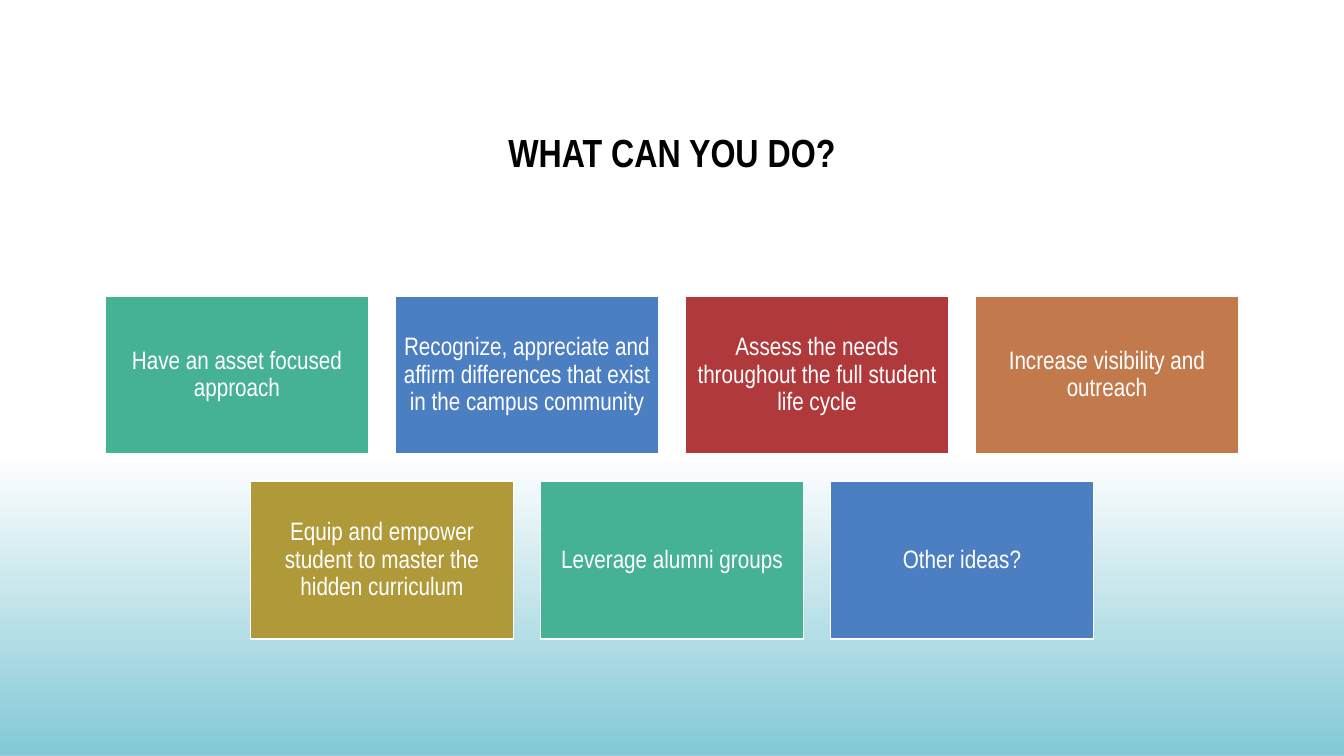
from lxml.etree import SubElement
from pptx import Presentation
from pptx.dml.color import RGBColor
from pptx.enum.shapes import MSO_SHAPE as SHAPE
from pptx.enum.text import MSO_ANCHOR as ANCHOR, PP_ALIGN as ALIGN
from pptx.oxml.ns import qn
from pptx.util import Emu, Pt

WIDTH, HEIGHT = 1344, 756
TILE_W, TILE_H, GAP, INSET = 263, 158, 27, 7
FONT = "Arial Narrow"
GREEN, BLUE, RED, ORANGE, OLIVE = "45B195", "4C7EC2", "B0393C", "C27A4C", "B09939"
ROWS = [
    [("Have an asset focused approach", GREEN),
     ("Recognize, appreciate and affirm differences that exist in the campus community", BLUE),
     ("Assess the needs throughout the full student life cycle", RED),
     ("Increase visibility and outreach", ORANGE)],
    [("Equip and empower student to master the hidden curriculum", OLIVE),
     ("Leverage alumni groups", GREEN),
     ("Other ideas?", BLUE)],
]


def px(n):
    return Emu(round(n * 914400 / 100.8))


def color(value):
    return RGBColor.from_string(value)


def add_rect(slide, x, y, w, h):
    sp = slide.shapes.add_shape(SHAPE.RECTANGLE, px(x), px(y), px(w), px(h))
    sp.shadow.inherit = False
    return sp


def write(tf, text, size, ink, anchor, spacing, bold=False):
    tf.word_wrap = True
    tf.vertical_anchor = anchor
    p = tf.paragraphs[0]
    p.text = text
    p.alignment = ALIGN.CENTER
    p.line_spacing = spacing
    p.font.name, p.font.size, p.font.bold = FONT, Pt(size), bold
    p.font.color.rgb = color(ink)


def add_fade(slide, x, y, w, h):
    """Teal band, clear at the top and solid at the bottom."""
    sp = add_rect(slide, x, y, w, h)
    sp.line.fill.background()
    sp.fill.gradient()
    sp.fill.gradient_angle = 270
    top, bottom = sp.fill.gradient_stops
    top.position, bottom.position = 0.14, 1
    for stop in (top, bottom):
        stop.color.rgb = color("82C8D6")
    # Make the first stop fully transparent
    clear = sp.fill._xPr.find(".//" + qn("a:srgbClr"))
    SubElement(clear, qn("a:alpha")).set("val", "0")


def add_title(slide, x, y, w, h):
    tb = slide.shapes.add_textbox(px(x), px(y), px(w), px(h))
    write(tb.text_frame, "WHAT CAN YOU DO?", 28, "000000", ANCHOR.BOTTOM, 1.2, bold=True)


def add_tile(slide, x, y, text, fill):
    sp = add_rect(slide, x, y, TILE_W, TILE_H)
    sp.fill.solid()
    sp.fill.fore_color.rgb = color(fill)
    sp.line.color.rgb = color("FFFFFF")
    sp.line.width = Pt(1)
    tf = sp.text_frame
    tf.margin_left = tf.margin_right = tf.margin_top = tf.margin_bottom = px(INSET)
    write(tf, text, 18, "FFFFFF", ANCHOR.MIDDLE, 0.9)


def add_tiles(slide, x, y, w):
    """Rows of equal tiles, each row centred in the width."""
    for i, row in enumerate(ROWS):
        row_w = len(row) * (TILE_W + GAP) - GAP
        left = x + (w - row_w) / 2
        for j, (text, fill) in enumerate(row):
            add_tile(slide, left + j * (TILE_W + GAP), y + i * (TILE_H + GAP), text, fill)


def main():
    prs = Presentation()
    prs.slide_width, prs.slide_height = px(WIDTH), px(HEIGHT)
    slide = prs.slides.add_slide(prs.slide_layouts[6])
    slide.background.fill.solid()
    slide.background.fill.fore_color.rgb = color("FFFFFF")
    add_title(slide, 168, 84, 1008, 96)
    add_fade(slide, 0, 412, WIDTH, 344)
    add_tiles(slide, 0, 296, WIDTH)
    prs.save("out.pptx")


if __name__ == "__main__":
    main()
